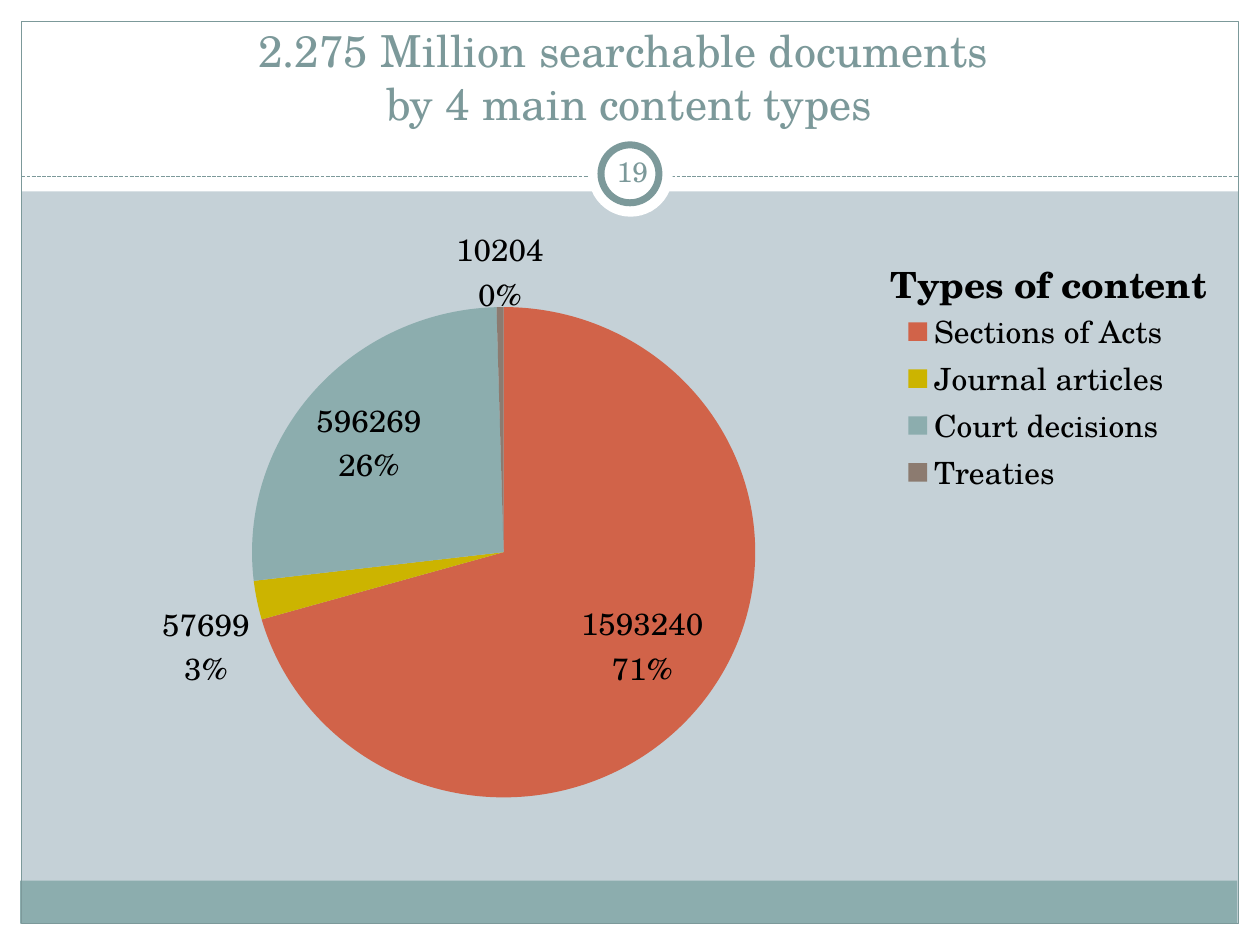
from dataclasses import dataclass
from typing import Optional

from lxml import etree
from pptx import Presentation
from pptx.chart.data import CategoryChartData
from pptx.dml.color import RGBColor
from pptx.enum.chart import XL_CHART_TYPE, XL_LABEL_POSITION, XL_LEGEND_POSITION
from pptx.enum.dml import MSO_LINE
from pptx.enum.shapes import MSO_CONNECTOR, MSO_SHAPE
from pptx.enum.text import MSO_ANCHOR, PP_ALIGN
from pptx.oxml import parse_xml
from pptx.oxml.ns import nsdecls, qn
from pptx.util import Inches, Pt

RECTANGLE, OVAL = MSO_SHAPE.RECTANGLE, MSO_SHAPE.OVAL
CENTER = PP_ALIGN.CENTER
TITLE_ONLY_LAYOUT = 5


@dataclass(frozen=True)
class Theme:
    font: str = "TeX Gyre Schola"
    background: str = "C5D1D7"
    white: str = "FFFFFF"
    accent: str = "7C999A"
    footer: str = "8CADAE"
    text: str = "000000"
    title_size: float = 25.2
    number_size: float = 16
    chart_size: float = 18
    chart_title_size: float = 21.2


@dataclass(frozen=True)
class Panel:
    left: float
    top: float
    width: float
    height: float
    fill: Optional[str] = None
    line: Optional[str] = None
    line_width: float = 0.75
    kind: MSO_SHAPE = RECTANGLE


@dataclass(frozen=True)
class Content:
    name: str
    count: int
    color: str


THEME = Theme()

FRAME = [
    Panel(0, 7.33, 10, 0.17, THEME.white),
    Panel(0, 0, 10, 1.52, THEME.white),
    Panel(0, 0, 0.17, 7.5, THEME.white),
    Panel(9.83, 0, 0.17, 7.5, THEME.white),
    Panel(0.16, 6.99, 9.66, 0.34, THEME.footer),
    Panel(0.17, 0.17, 9.66, 7.16, line=THEME.accent),
]
BADGE = [
    Panel(4.67, 1.05, 0.67, 0.67, THEME.white, kind=OVAL),
    Panel(4.77, 1.15, 0.46, 0.46, THEME.white, THEME.accent, 4, OVAL),
]
CONTENTS = [
    Content("Sections of Acts", 1593240, "D16349"),
    Content("Journal articles", 57699, "CCB400"),
    Content("Court decisions", 596269, "8CADAE"),
    Content("Treaties", 10204, "8C7B70"),
]


def style_font(font, size: float, color: str, bold: bool = False) -> None:
    font.name = THEME.font
    font.size = Pt(size)
    font.bold = bold
    font.color.rgb = RGBColor.from_string(color)


def draw_panel(page, panel: Panel) -> None:
    shape = page.shapes.add_shape(
        panel.kind, Inches(panel.left), Inches(panel.top),
        Inches(panel.width), Inches(panel.height))
    shape.shadow.inherit = False
    if panel.fill:
        shape.fill.solid()
        shape.fill.fore_color.rgb = RGBColor.from_string(panel.fill)
    else:
        shape.fill.background()
    if panel.line:
        shape.line.color.rgb = RGBColor.from_string(panel.line)
        shape.line.width = Pt(panel.line_width)
    else:
        shape.line.fill.background()


def draw_divider(page) -> None:
    line = page.shapes.add_connector(
        MSO_CONNECTOR.STRAIGHT, Inches(0.17), Inches(1.4), Inches(9.83), Inches(1.4))
    line.line.color.rgb = RGBColor.from_string(THEME.accent)
    line.line.width = Pt(0.75)
    line.line.dash_style = MSO_LINE.SQUARE_DOT
    etree.SubElement(line.element.spPr, qn("a:effectLst"))


def write_centered(box, text: str, size: float) -> None:
    box.text_frame.text = text
    box.text_frame.word_wrap = True
    para = box.text_frame.paragraphs[0]
    para.alignment = CENTER
    for span in para.runs:
        style_font(span.font, size, THEME.accent)


def place_title(page) -> None:
    title = page.shapes.title
    title.left, title.top = Inches(0.33), Inches(0.25)
    title.width, title.height = Inches(9.33), Inches(0.83)
    write_centered(title, "2.275 Million searchable documents \vby 4 main content types",
                   THEME.title_size)
    title.text_frame.vertical_anchor = MSO_ANCHOR.BOTTOM
    # Placeholders start at the back, so lift the title above the white band.
    title.element.getparent().append(title.element)


def draw_page_number(page) -> None:
    box = page.shapes.add_textbox(Inches(4.77), Inches(1.12), Inches(0.5), Inches(0.48))
    write_centered(box, "19", THEME.number_size)
    frame = box.text_frame
    frame.vertical_anchor = MSO_ANCHOR.MIDDLE
    frame.margin_left = frame.margin_right = Inches(0.05)
    frame.margin_top = frame.margin_bottom = Inches(0.05)


def manual_layout(x: float, y: float, width: float = 0, height: float = 0,
                  inner: bool = False):
    """Return a c:layout in fractions of the chart; zero sizes are left automatic."""
    target = '<c:layoutTarget val="inner"/>' if inner else ""
    size = f'<c:w val="{width}"/><c:h val="{height}"/>' if width else ""
    return parse_xml(
        f'<c:layout {nsdecls("c")}><c:manualLayout>{target}'
        '<c:xMode val="edge"/><c:yMode val="edge"/>'
        f'<c:x val="{x}"/><c:y val="{y}"/>{size}</c:manualLayout></c:layout>')


def set_layout(parent, layout, after: Optional[str] = None) -> None:
    for old in parent.findall(qn("c:layout")):
        parent.remove(old)
    if after:
        parent.find(qn(after)).addnext(layout)
    else:
        parent.insert(0, layout)


def draw_chart(page) -> None:
    data = CategoryChartData()
    data.categories = [content.name for content in CONTENTS]
    data.add_series("Types of content", [content.count for content in CONTENTS])
    chart = page.shapes.add_chart(
        XL_CHART_TYPE.PIE, Inches(0.33), Inches(1.67), Inches(9.3), Inches(5), data).chart
    style_font(chart.font, THEME.chart_size, THEME.text)

    chart.has_title = True
    heading = chart.chart_title
    heading.text_frame.text = "Types of content"
    style_font(heading.text_frame.paragraphs[0].runs[0].font,
               THEME.chart_title_size, THEME.text, bold=True)
    heading.include_in_layout = False
    set_layout(heading._element, manual_layout(0.72, 0.03), after="c:tx")

    chart.has_legend = True
    chart.legend.position = XL_LEGEND_POSITION.RIGHT
    chart.legend.include_in_layout = False
    set_layout(chart.legend._element, manual_layout(0.72, 0.13, 0.26, 0.31),
               after="c:legendPos")

    plot = chart.plots[0]
    plot.vary_by_categories = True
    set_layout(plot._element.getparent(), manual_layout(0.02, 0.13, 0.75, 0.8, inner=True))
    for index, content in enumerate(CONTENTS):
        fill = plot.series[0].points[index].format.fill
        fill.solid()
        fill.fore_color.rgb = RGBColor.from_string(content.color)

    plot.has_data_labels = True
    labels = plot.data_labels
    labels.show_value = labels.show_percentage = True
    labels.position = XL_LABEL_POSITION.BEST_FIT
    style_font(labels.font, THEME.chart_size, THEME.text)
    separator = etree.Element(qn("c:separator"))
    separator.text = "\n"
    labels._element.find(qn("c:showBubbleSize")).addnext(separator)


def main() -> None:
    deck = Presentation()
    deck.slide_width, deck.slide_height = Inches(10), Inches(7.5)
    page = deck.slides.add_slide(deck.slide_layouts[TITLE_ONLY_LAYOUT])
    page.background.fill.solid()
    page.background.fill.fore_color.rgb = RGBColor.from_string(THEME.background)
    for panel in FRAME:
        draw_panel(page, panel)
    draw_divider(page)
    for panel in BADGE:
        draw_panel(page, panel)
    place_title(page)
    draw_page_number(page)
    draw_chart(page)
    deck.save("out.pptx")


if __name__ == "__main__":
    main()
